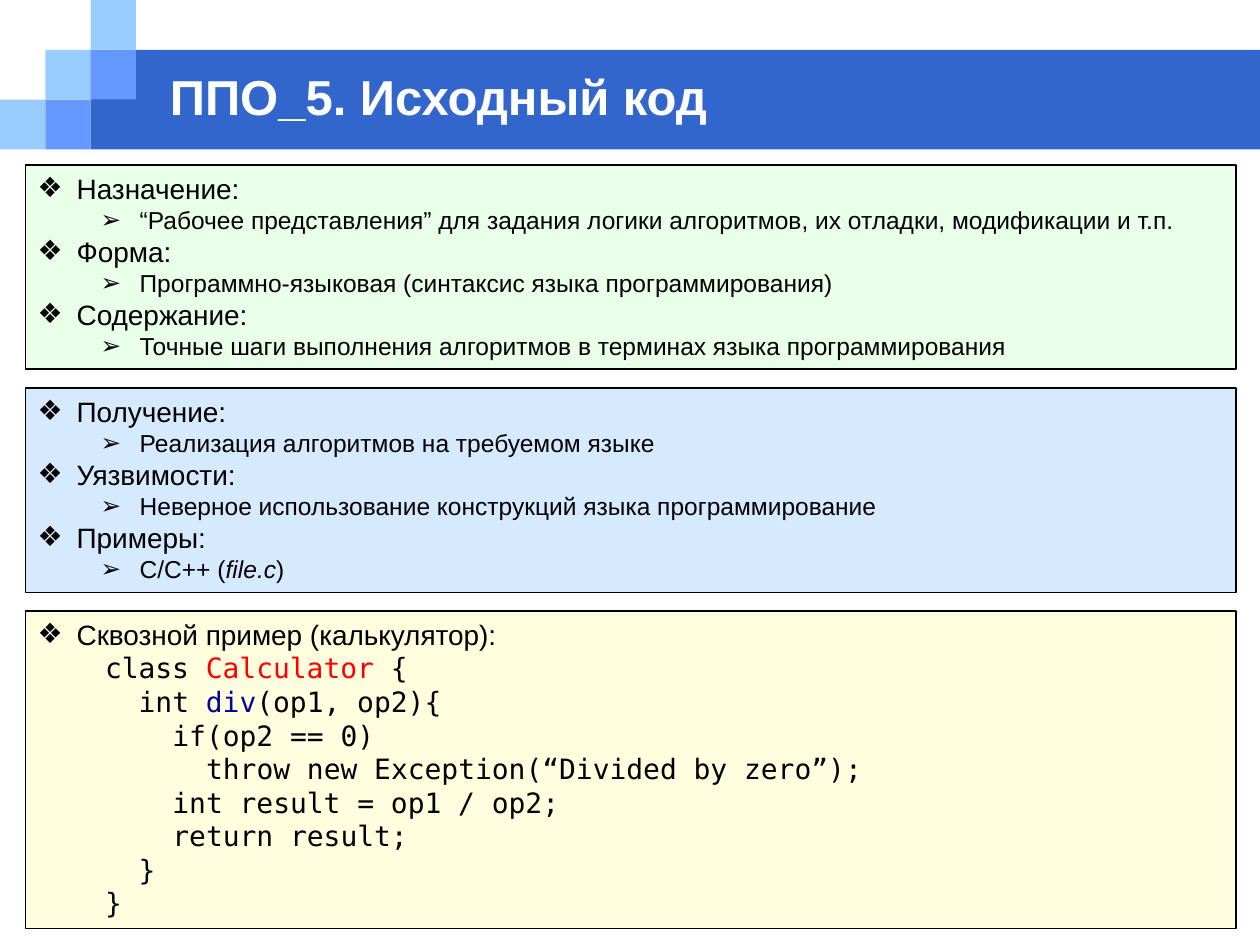
from lxml import etree
from pptx import Presentation
from pptx import util as u
from pptx.dml.color import RGBColor
from pptx.enum import shapes, text
from pptx.oxml import ns

COLORS = {
    "banner": "3366CC", "light": "99CCFF", "middle": "6699FF",
    "green": "99FF99", "blue": "3399FF", "yellow": "FFFF66",
    "black": "000000", "white": "FFFFFF", "red": "FF0000", "navy": "000798",
}

deck = Presentation()
deck.slide_width, deck.slide_height = u.Inches(10), u.Inches(7.5)
page = deck.slides.add_slide(deck.slide_layouts[6])
COLUMN, ROW = deck.slide_width / 100, deck.slide_height / 75


def add_box(left, top, width, height, color):
    box = page.shapes.add_shape(
        shapes.MSO_SHAPE.RECTANGLE, int(left * COLUMN), int(top * ROW),
        int(width * COLUMN), int(height * ROW))
    box.shadow.inherit = False
    box.fill.solid()
    box.fill.fore_color.rgb = RGBColor.from_string(COLORS[color])
    box.line.fill.background()
    return box


def add_spans(para, spans, **formats):
    for words, color, italic in spans:
        span = para.add_run()
        span.text = words
        span.font.color.rgb = RGBColor.from_string(COLORS[color])
        for name, value in {**formats, "italic": italic}.items():
            setattr(span.font, name, value)


TILE_WIDTH, TILE_HEIGHT = 3.6, 3.95
add_box(2 * TILE_WIDTH, TILE_HEIGHT, 100 - 2 * TILE_WIDTH, 2 * TILE_HEIGHT, "banner")
tiles = [(0, 2, "light"), (1, 1, "light"), (2, 0, "light"),
         (2, 1, "middle"), (1, 2, "middle")]
for column, row, color in tiles:
    add_box(column * TILE_WIDTH, row * TILE_HEIGHT, TILE_WIDTH, TILE_HEIGHT, color)

title = page.shapes.add_textbox(
    int(12.5 * COLUMN), int(5 * ROW), int(80.8 * COLUMN), int(5.3 * ROW))
title.text_frame.word_wrap = True
title.text_frame.vertical_anchor = text.MSO_ANCHOR.MIDDLE
add_spans(title.text_frame.paragraphs[0], [("ППО_5. Исходный код", "white", False)],
          size=u.Pt(28), name="Arial", bold=True)

LEVELS = {
    "head": {"size": 16, "font": "Arial", "margin": 0.31, "bullet": "❖"},
    "item": {"size": 14, "font": "Arial", "margin": 0.81, "bullet": "➢"},
    "code": {"size": 16, "font": "DejaVu Sans Mono", "margin": 0, "bullet": None},
}
CODE_CHARACTER = 0.13375
panels = [
    ("green", 16.2, [
        ("head", 0, "Назначение:"),
        ("item", 0, "“Рабочее представления” для задания логики алгоритмов, их отладки, модификации и т.п."),
        ("head", 0, "Форма:"),
        ("item", 0, "Программно-языковая (синтаксис языка программирования)"),
        ("head", 0, "Содержание:"),
        ("item", 0, "Точные шаги выполнения алгоритмов в терминах языка программирования"),
    ]),
    ("blue", 16.2, [
        ("head", 0, "Получение:"),
        ("item", 0, "Реализация алгоритмов на требуемом языке"),
        ("head", 0, "Уязвимости:"),
        ("item", 0, "Неверное использование конструкций языка программирование"),
        ("head", 0, "Примеры:"),
        ("item", 0, [("C/C++ (", "black", False), ("file.c", "black", True),
                     (")", "black", False)]),
    ]),
    ("yellow", 25.2, [
        ("head", 0, "Сквозной пример (калькулятор):"),
        ("code", 4, [("class ", "black", False), ("Calculator", "red", False),
                     (" {", "black", False)]),
        ("code", 6, [("int ", "black", False), ("div", "navy", False),
                     ("(op1, op2){", "black", False)]),
        ("code", 8, "if(op2 == 0)"),
        ("code", 10, "throw new Exception(“Divided by zero”);"),
        ("code", 8, "int result = op1 / op2;"),
        ("code", 8, "return result;"),
        ("code", 6, "}"),
        ("code", 4, "}"),
    ]),
]

top, gap = 13.1, 1.5
for color, height, lines in panels:
    box = add_box(2, top, 96.1, height, color)
    top += height + gap
    tint = box.fill._xPr.find(".//" + ns.qn("a:srgbClr"))
    etree.SubElement(tint, ns.qn("a:alpha"), val="20000")
    box.line.color.rgb = RGBColor.from_string(COLORS["black"])
    box.line.width = u.Pt(0.75)
    frame = box.text_frame
    frame.word_wrap = True
    frame.vertical_anchor = text.MSO_ANCHOR.TOP
    for number, (level, indent, content) in enumerate(lines):
        style = LEVELS[level]
        para = frame.paragraphs[0] if number == 0 else frame.add_paragraph()
        para.alignment = text.PP_ALIGN.LEFT if level == "item" else text.PP_ALIGN.JUSTIFY
        settings = para._p.get_or_add_pPr()
        settings.set("marL", str(u.Inches(style["margin"] + indent * CODE_CHARACTER)))
        if style["bullet"]:
            settings.set("indent", str(u.Inches(-0.31)))
            etree.SubElement(settings, ns.qn("a:buFont"), typeface="Arial")
            etree.SubElement(settings, ns.qn("a:buChar"), char=style["bullet"])
        spans = [(content, "black", False)] if isinstance(content, str) else content
        add_spans(para, spans, size=u.Pt(style["size"]), name=style["font"])

deck.save("out.pptx")
